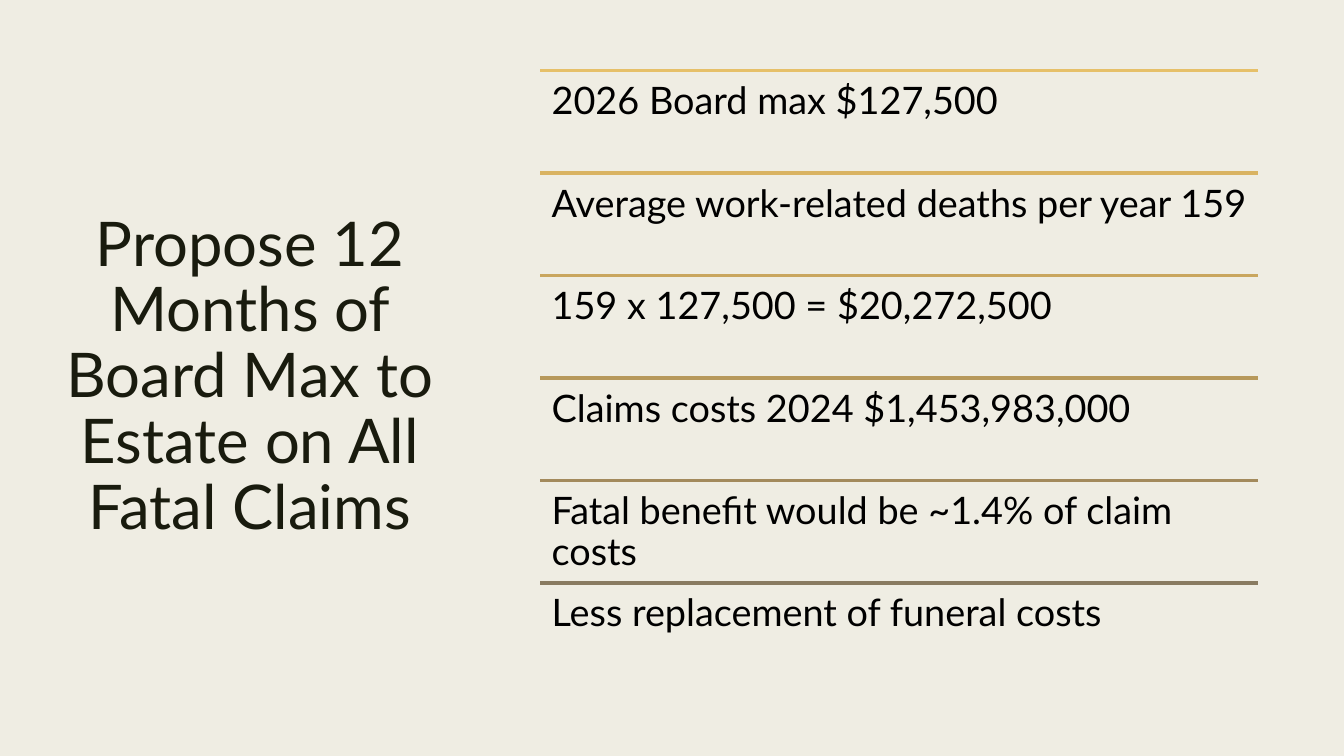
from pptx import Presentation
from pptx.dml.color import RGBColor
from pptx.enum.shapes import MSO_CONNECTOR
from pptx.enum.text import MSO_ANCHOR, MSO_AUTO_SIZE, PP_ALIGN
from pptx.oxml.ns import qn
from pptx.util import Pt
from lxml import etree

STRAIGHT = MSO_CONNECTOR.STRAIGHT
LEFT, CENTER = PP_ALIGN.LEFT, PP_ALIGN.CENTER
TOP, MIDDLE = MSO_ANCHOR.TOP, MSO_ANCHOR.MIDDLE
NO_FIT = MSO_AUTO_SIZE.NONE

CREAM = RGBColor(0xEF, 0xED, 0xE3)
DARK = RGBColor(0x19, 0x1B, 0x0E)
BLACK = RGBColor(0, 0, 0)
FONT = "Lato"

# Content: each point with the colour of the rule above it
TITLE = "Propose 12 Months of Board Max to Estate on All Fatal Claims"
POINTS = [
    ("2026 Board max $127,500", RGBColor(0xE6, 0xC0, 0x69)),
    ("Average work-related deaths per year 159", RGBColor(0xD9, 0xB3, 0x62)),
    ("159 x 127,500 = $20,272,500", RGBColor(0xC9, 0xA6, 0x5E)),
    ("Claims costs 2024 $1,453,983,000", RGBColor(0xB7, 0x99, 0x5B)),
    ("Fatal benefit would be ~1.4% of claim costs", RGBColor(0xA3, 0x8A, 0x5C)),
    ("Less replacement of funeral costs", RGBColor(0x89, 0x7B, 0x61)),
]

# Layout in points
AREA_TOP, AREA_H = 50.4, 439.2
TITLE_X, TITLE_W = 29.5, 298
LIST_X, LIST_W = 385.9, 512.6
ROW_H = AREA_H / len(POINTS)


def write(shape, text, size, color, align=LEFT, anchor=TOP, spacing=0.9,
          inset_x=7.2, inset_y=3.6):
    tf = shape.text_frame
    tf.word_wrap = True
    tf.auto_size = NO_FIT
    tf.vertical_anchor = anchor
    tf.margin_left = tf.margin_right = Pt(inset_x)
    tf.margin_top = tf.margin_bottom = Pt(inset_y)
    p = tf.paragraphs[0]
    p.alignment = align
    p.line_spacing = spacing
    r = p.add_run()
    r.text = text
    r.font.name = FONT
    r.font.size = Pt(size)
    r.font.color.rgb = color


prs = Presentation()
prs.slide_width, prs.slide_height = Pt(960), Pt(540)
s = prs.slides.add_slide(prs.slide_layouts[5])
s.background.fill.solid()
s.background.fill.fore_color.rgb = CREAM

# Title on the left
title = s.shapes.title
title.left, title.top = Pt(TITLE_X), Pt(AREA_TOP)
title.width, title.height = Pt(TITLE_W), Pt(AREA_H)
write(title, TITLE, 44, DARK, align=CENTER, anchor=MIDDLE, spacing=0.89)

# Ruled list on the right
for i, (text, color) in enumerate(POINTS):
    y = AREA_TOP + i * ROW_H
    rule = s.shapes.add_connector(
        STRAIGHT, Pt(LIST_X), Pt(y), Pt(LIST_X + LIST_W), Pt(y))
    rule.line.color.rgb = color
    rule.line.width = Pt(2.75)
    etree.SubElement(rule._element.spPr, qn("a:effectLst"))
    box = s.shapes.add_textbox(Pt(LIST_X), Pt(y), Pt(LIST_W), Pt(ROW_H))
    write(box, text, 27, BLACK, inset_x=8.1, inset_y=8.1)

prs.save("out.pptx")
